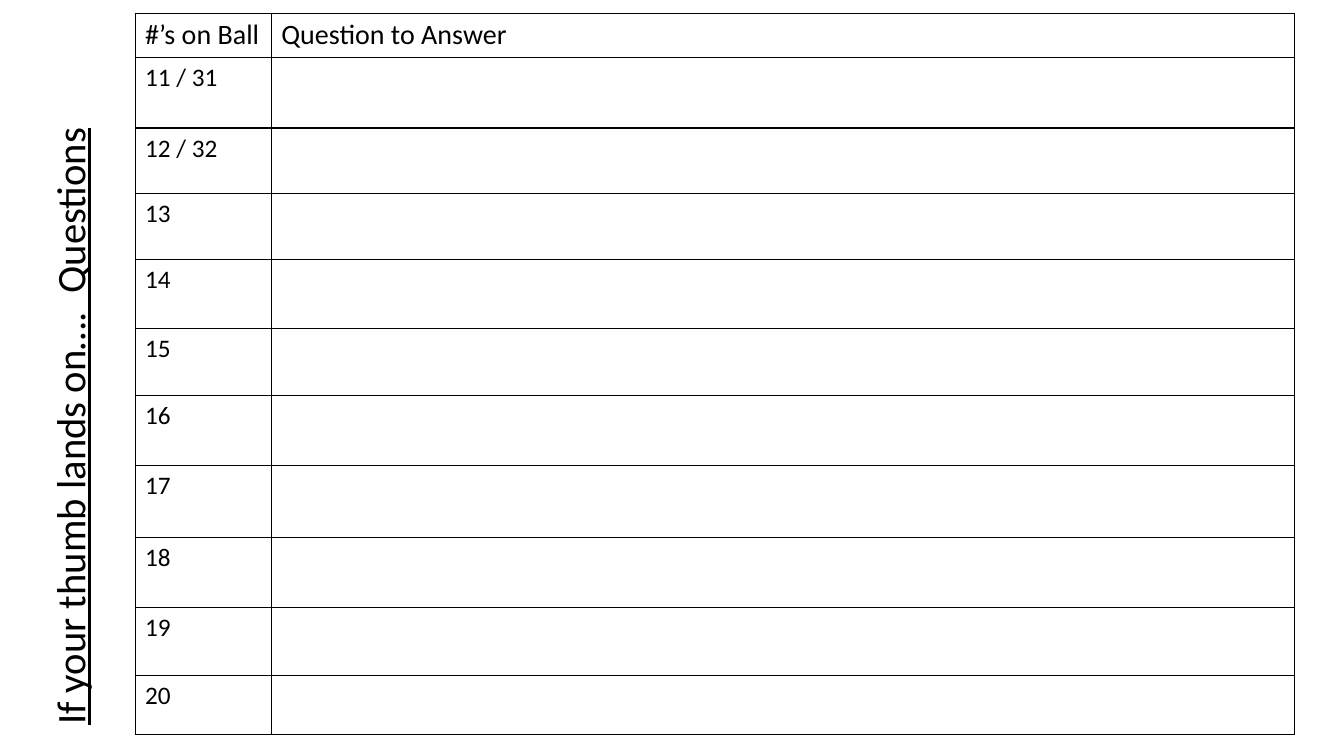
from dataclasses import dataclass

from lxml import etree
from pptx import Presentation
from pptx import util as u
from pptx.dml.color import RGBColor
from pptx.enum import text
from pptx.oxml.ns import qn

PX = 9144  # 100 px to the inch


@dataclass(frozen=True)
class Theme:
    font: str = "Calibri"
    ink: str = "000000"
    title: int = 29
    header: int = 20
    body: int = 18
    rule: int = 1


THEME = Theme()
HEADERS = ["#’s on Ball", "Question to Answer"]
BALL_NUMBERS = ["11 / 31", "12 / 32", *map(str, range(13, 21))]
COLUMN_WIDTHS = [135, 1015]
ROW_HEIGHTS = [43, 70, 65, 65, 69, 66, 70, 71, 70, 67, 59]


def px(n):
    return u.Emu(round(n * PX))


def write(tf, words, size, **extra):
    p = tf.paragraphs[0]
    p.alignment = text.PP_ALIGN.LEFT
    r = p.add_run()
    r.text = words
    formats = {"name": THEME.font, "size": u.Pt(size), **extra}
    for key, value in formats.items():
        setattr(r.font, key, value)
    r.font.color.rgb = RGBColor.from_string(THEME.ink)
    return p


def rule_cell(cell):
    """Draw the four borders of a cell and leave it unfilled."""
    tc_pr = cell._tc.get_or_add_tcPr()
    for side in ("lnL", "lnR", "lnT", "lnB"):
        ln = etree.SubElement(tc_pr, qn(f"a:{side}"), w=str(u.Pt(THEME.rule)))
        fill = etree.SubElement(ln, qn("a:solidFill"))
        etree.SubElement(fill, qn("a:srgbClr"), val=THEME.ink)
    cell.fill.background()


def add_side_title(s, box, words):
    """Set a title that reads upwards inside the upright box."""
    x, y, w, h = box
    left, top = x + (w - h) / 2, y + (h - w) / 2
    sp = s.shapes.add_textbox(px(left), px(top), px(h), px(w))
    sp.rotation = 270
    tf = sp.text_frame
    tf.word_wrap = True
    tf.vertical_anchor = text.MSO_ANCHOR.TOP
    write(tf, words, THEME.title, underline=True).line_spacing = 0.9


def add_question_table(s, box):
    rows = [HEADERS] + [[number, ""] for number in BALL_NUMBERS]
    table = s.shapes.add_table(len(rows), len(HEADERS), *map(px, box)).table
    table.first_row = table.horz_banding = False
    for column, width in zip(table.columns, COLUMN_WIDTHS):
        column.width = px(width)
    for i, (row, height) in enumerate(zip(table.rows, ROW_HEIGHTS)):
        row.height = px(height)
        for cell, words in zip(row.cells, rows[i]):
            rule_cell(cell)
            if words:
                write(cell.text_frame, words, THEME.body if i else THEME.header)


def main():
    prs = Presentation()
    prs.slide_width, prs.slide_height = px(1333), px(750)
    s = prs.slides.add_slide(prs.slide_layouts[6])
    add_question_table(s, (134, 13, sum(COLUMN_WIDTHS), sum(ROW_HEIGHTS)))
    add_side_title(s, (45, -297, 89, 1026), "If your thumb lands on….  Questions")
    prs.save("out.pptx")


if __name__ == "__main__":
    main()
